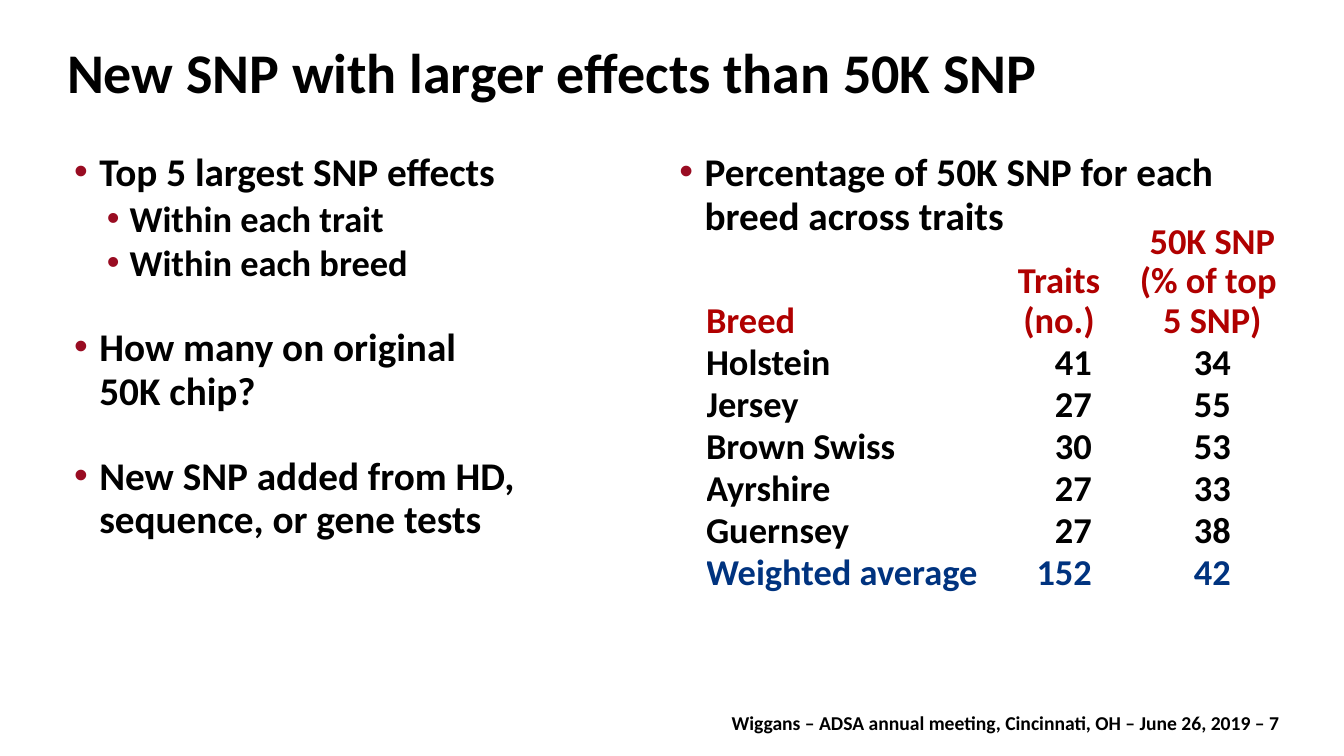
from lxml import etree
from pptx import Presentation
from pptx import util as u
from pptx.dml.color import RGBColor
from pptx.enum import text
from pptx.oxml.ns import qn

PX = 9144  # EMU per px, 100 px to the inch
COLORS = {"black": "000000", "bullet": "990C22", "header": "B00000", "average": "00337F"}
LEFT, CENTER, RIGHT = text.PP_ALIGN.LEFT, text.PP_ALIGN.CENTER, text.PP_ALIGN.RIGHT
NO_MARGINS = dict.fromkeys(("margin_left", "margin_top", "margin_right", "margin_bottom"), 0)

# Per outline level: text size, line spacing, left margin and hanging indent
LEVELS = [
    {"size": 56, "line": 62, "margin": 65, "hang": 50},
    {"size": 52, "line": 58, "margin": 125, "hang": 45},
]

# Level, text, space after
QUESTIONS = [
    (0, "Top 5 largest SNP effects", 6),
    (1, "Within each trait", 6),
    (1, "Within each breed", 60),
    (0, "How many on original 50K chip?", 60),
    (0, "New SNP added from HD, sequence, or gene tests", 48),
]
PERCENTAGE = [(0, "Percentage of 50K SNP for each breed across traits", 30)]

BREED_ROWS = [
    ("Breed", "Traits (no.)", "50K SNP\n(% of top \n5 SNP)"),
    ("Holstein", "41", "34"),
    ("Jersey", "27", "55"),
    ("Brown Swiss", "30", "53"),
    ("Ayrshire", "27", "33"),
    ("Guernsey", "27", "38"),
    ("Weighted average", "152", "42"),
]


def apply(target, values):
    for name, value in values.items():
        setattr(target, name, value)


class SlideBuilder:
    font = "Calibri"

    def __init__(self, slide):
        self.slide = slide

    def format_paragraph(self, paragraph, size, color="black", **values):
        apply(paragraph, values)
        apply(paragraph.font, {"name": self.font, "size": u.Pt(size), "bold": True})
        paragraph.font.color.rgb = RGBColor.from_string(COLORS[color])

    def add_box(self, *box):
        return self.slide.shapes.add_textbox(*(length * PX for length in box)).text_frame

    def title(self, content, box, size):
        title = self.slide.shapes.title
        apply(title, dict(zip(("left", "top", "width", "height"), (length * PX for length in box))))
        frame = title.text_frame
        apply(frame, {**NO_MARGINS, "text": content, "word_wrap": True,
                      "vertical_anchor": text.MSO_ANCHOR.TOP})
        self.format_paragraph(frame.paragraphs[0], size, alignment=LEFT)

    def footer(self, content, box, size):
        frame = self.add_box(*box)
        apply(frame, {"text": content, "word_wrap": False})
        self.format_paragraph(frame.paragraphs[0], size, alignment=RIGHT)

    def bullets(self, items, box):
        frame = self.add_box(*box)
        apply(frame, {**NO_MARGINS, "word_wrap": True,
                      "text": "\n".join(content for _, content, _ in items)})
        for paragraph, (level, _, after) in zip(frame.paragraphs, items):
            style = LEVELS[level]
            apply(paragraph, {"level": level, "line_spacing": u.Pt(style["line"]),
                              "space_after": u.Pt(after)})
            self.add_bullet(paragraph, style)
            self.format_paragraph(paragraph, style["size"])

    def add_bullet(self, paragraph, style):
        properties = paragraph._p.get_or_add_pPr()
        properties.set("marL", str(style["margin"] * PX))
        properties.set("indent", str(-style["hang"] * PX))
        color = etree.SubElement(properties, qn("a:buClr"))
        etree.SubElement(color, qn("a:srgbClr"), val=COLORS["bullet"])
        etree.SubElement(properties, qn("a:buFont"), typeface="Arial")
        etree.SubElement(properties, qn("a:buChar"), char="•")

    def table(self, rows, left, top, widths, header_height, row_height, size):
        heights = [header_height] + [row_height] * (len(rows) - 1)
        table = self.slide.shapes.add_table(
            len(rows), len(widths), left * PX, top * PX,
            sum(widths) * PX, sum(heights) * PX).table
        apply(table, {"first_row": False, "horz_banding": False})
        for column, width in zip(table.columns, widths):
            column.width = width * PX
        for row, height in zip(table.rows, heights):
            row.height = height * PX
        for i, values in enumerate(rows):
            header = i == 0
            color = "header" if header else "average" if i == len(rows) - 1 else "black"
            for j, value in enumerate(values):
                cell = table.cell(i, j)
                cell.fill.background()
                apply(cell, {**NO_MARGINS, "text": value, "vertical_anchor":
                             text.MSO_ANCHOR.BOTTOM if header else text.MSO_ANCHOR.TOP})
                alignment = (LEFT, CENTER if header else RIGHT, CENTER)[j]
                if alignment == RIGHT:
                    cell.margin_right = 90 * PX
                for paragraph in cell.text_frame.paragraphs:
                    self.format_paragraph(paragraph, size, color, alignment=alignment,
                                          line_spacing=u.Pt(56 if header else 60))


def main():
    presentation = Presentation()
    apply(presentation, {"slide_width": 2665 * PX, "slide_height": 1500 * PX})
    builder = SlideBuilder(presentation.slides.add_slide(presentation.slide_layouts[5]))
    builder.footer("Wiggans – ADSA annual meeting, Cincinnati, OH – June 26, 2019 – 7",
                   (1402, 1406, 1144, 57), 28)
    builder.title("New SNP with larger effects than 50K SNP", (133, 75, 2399, 135), 80)
    builder.bullets(QUESTIONS, (132, 300, 900, 783))
    builder.table(BREED_ROWS, 1400, 447, (545, 310, 298), 233, 83, 52)
    builder.bullets(PERCENTAGE, (1332, 300, 1201, 174))
    presentation.save("out.pptx")


if __name__ == "__main__":
    main()
